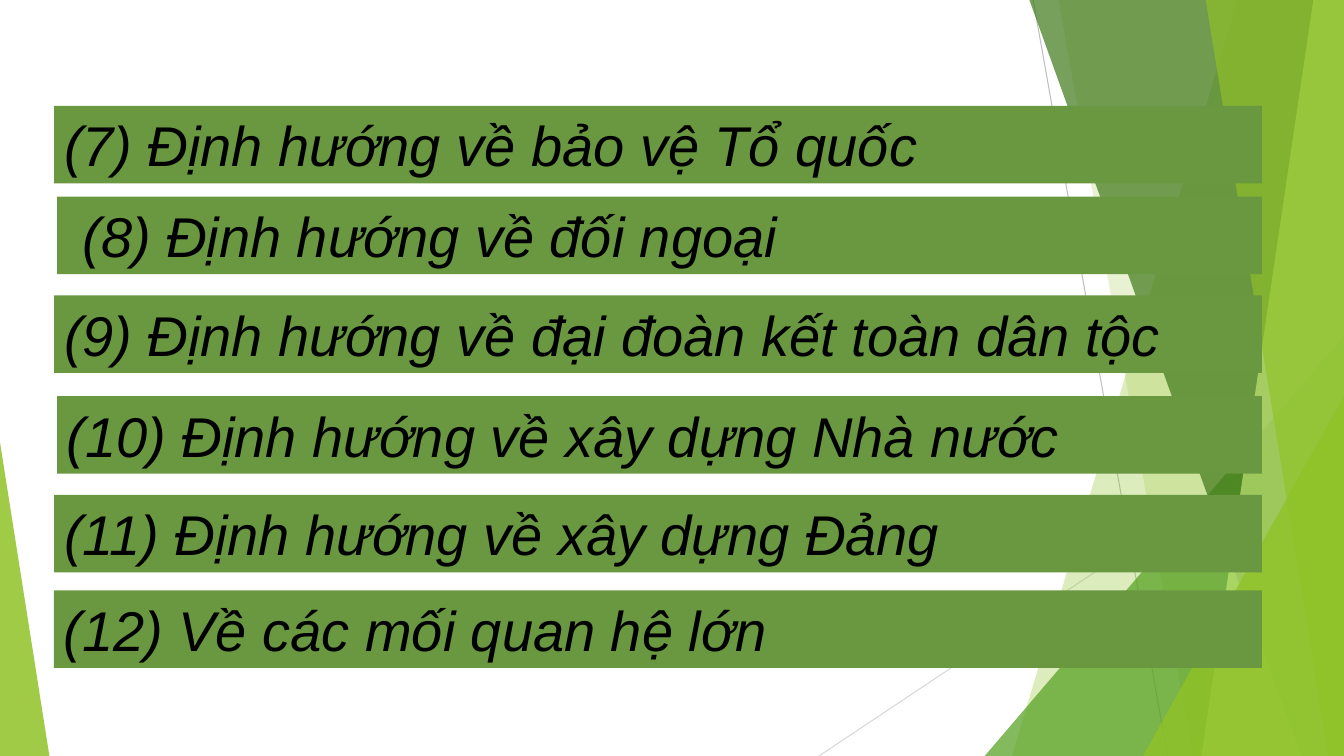
from dataclasses import dataclass

from lxml import etree
from pptx import Presentation
from pptx.dml.color import RGBColor
from pptx.enum.shapes import MSO_CONNECTOR, MSO_SHAPE
from pptx.enum.text import MSO_AUTO_SIZE, PP_ALIGN
from pptx.oxml.ns import qn
from pptx.util import Pt

STRAIGHT = MSO_CONNECTOR.STRAIGHT
TRIANGLE = MSO_SHAPE.ISOSCELES_TRIANGLE
JUSTIFY = PP_ALIGN.JUSTIFY
FIT_SHAPE = MSO_AUTO_SIZE.SHAPE_TO_FIT_TEXT


@dataclass(frozen=True)
class Theme:
    lime: str = "90C226"
    pale_lime: str = "C0E474"
    leaf: str = "54A021"
    forest: str = "3F7819"
    bar: str = "699841"
    text: str = "000000"
    line: str = "BFBFBF"
    pale_line: str = "D9D9D9"
    font: str = "Arial"
    size: int = 40


THEME = Theme()
WIDTH, HEIGHT = 960, 540
BAND_TOP = -0.6
BAR_RIGHT, BAR_HEIGHT = 901.4, 55.4

# left, top, wording
DIRECTIONS = [
    (38.7, 75.6, "(7) Định hướng về bảo vệ Tổ quốc"),
    (40.8, 140.5, " (8) Định hướng về đối ngoại"),
    (38.7, 211, "(9) Định hướng về đại đoàn kết toàn dân tộc"),
    (40.8, 283, "(10) Định hướng về xây dựng Nhà nước"),
    (38.7, 353.5, "(11) Định hướng về xây dựng Đảng"),
    (38.4, 421.7, "(12) Về các mối quan hệ lớn"),
]


def paint(shape, color, opacity):
    """Fill without outline or shadow; opacity is in percent."""
    shape.shadow.inherit = False
    shape.line.fill.background()
    shape.fill.solid()
    shape.fill.fore_color.rgb = RGBColor.from_string(color)
    tint = shape.fill._xPr.find(qn("a:solidFill"))[0]
    etree.SubElement(tint, qn("a:alpha")).set("val", str(opacity * 1000))


def add_band(slide, top_left, bottom_left, color, opacity):
    """Slanted band that reaches the right edge of the slide."""
    outline = slide.shapes.build_freeform(Pt(top_left), Pt(BAND_TOP))
    corners = [(WIDTH, BAND_TOP), (WIDTH, HEIGHT), (bottom_left, HEIGHT)]
    outline.add_line_segments([(Pt(x), Pt(y)) for x, y in corners], close=True)
    paint(outline.convert_to_shape(), color, opacity)


def add_triangle(slide, left, top, width, apex, color, opacity):
    """Triangle standing on the bottom edge; apex is 0 (left) to 1 (right)."""
    triangle = slide.shapes.add_shape(
        TRIANGLE, Pt(left), Pt(top), Pt(width), Pt(HEIGHT - top))
    triangle.adjustments[0] = apex
    paint(triangle, color, opacity)


def add_hairline(slide, start, end, color):
    hairline = slide.shapes.add_connector(
        STRAIGHT, *(Pt(value) for value in (*start, *end)))
    hairline.line.color.rgb = RGBColor.from_string(color)
    hairline.line.width = Pt(0.75)
    etree.SubElement(hairline._element.spPr, qn("a:effectLst"))


def write_text(frame, wording, *, size, color, font, italic, align):
    frame.word_wrap = True
    frame.auto_size = FIT_SHAPE
    paragraph = frame.paragraphs[0]
    paragraph.alignment = align
    run = paragraph.add_run()
    run.text = wording
    run.font.size = Pt(size)
    run.font.name = font
    run.font.italic = italic
    run.font.color.rgb = RGBColor.from_string(color)


def add_direction(slide, left, top, wording):
    bar = slide.shapes.add_textbox(
        Pt(left), Pt(top), Pt(BAR_RIGHT - left), Pt(BAR_HEIGHT))
    bar.fill.solid()
    bar.fill.fore_color.rgb = RGBColor.from_string(THEME.bar)
    write_text(bar.text_frame, wording, size=THEME.size, color=THEME.text,
               font=THEME.font, italic=True, align=JUSTIFY)


def add_backdrop(slide):
    add_hairline(slide, (738, 0), (834, HEIGHT), THEME.line)
    add_hairline(slide, (WIDTH, 290), (585, HEIGHT), THEME.pale_line)
    add_band(slide, 884.2, 722.9, THEME.lime, 30)
    add_band(slide, 756, 851.8, THEME.lime, 20)
    add_triangle(slide, 703.4, 239.8, 256.6, 1, THEME.leaf, 72)
    add_band(slide, 735.1, 929.5, THEME.forest, 70)
    add_band(slide, 938.2, 858.2, THEME.pale_lime, 70)
    add_band(slide, 861.1, 949, THEME.lime, 65)
    add_triangle(slide, 816.5, 283, 143.5, 1, THEME.lime, 80)
    add_triangle(slide, 0, 316, 35.3, 0, THEME.lime, 85)


def main():
    deck = Presentation()
    deck.slide_width, deck.slide_height = Pt(WIDTH), Pt(HEIGHT)
    slide = deck.slides.add_slide(deck.slide_layouts[6])
    add_backdrop(slide)
    for left, top, wording in DIRECTIONS:
        add_direction(slide, left, top, wording)
    deck.save("out.pptx")


if __name__ == "__main__":
    main()
